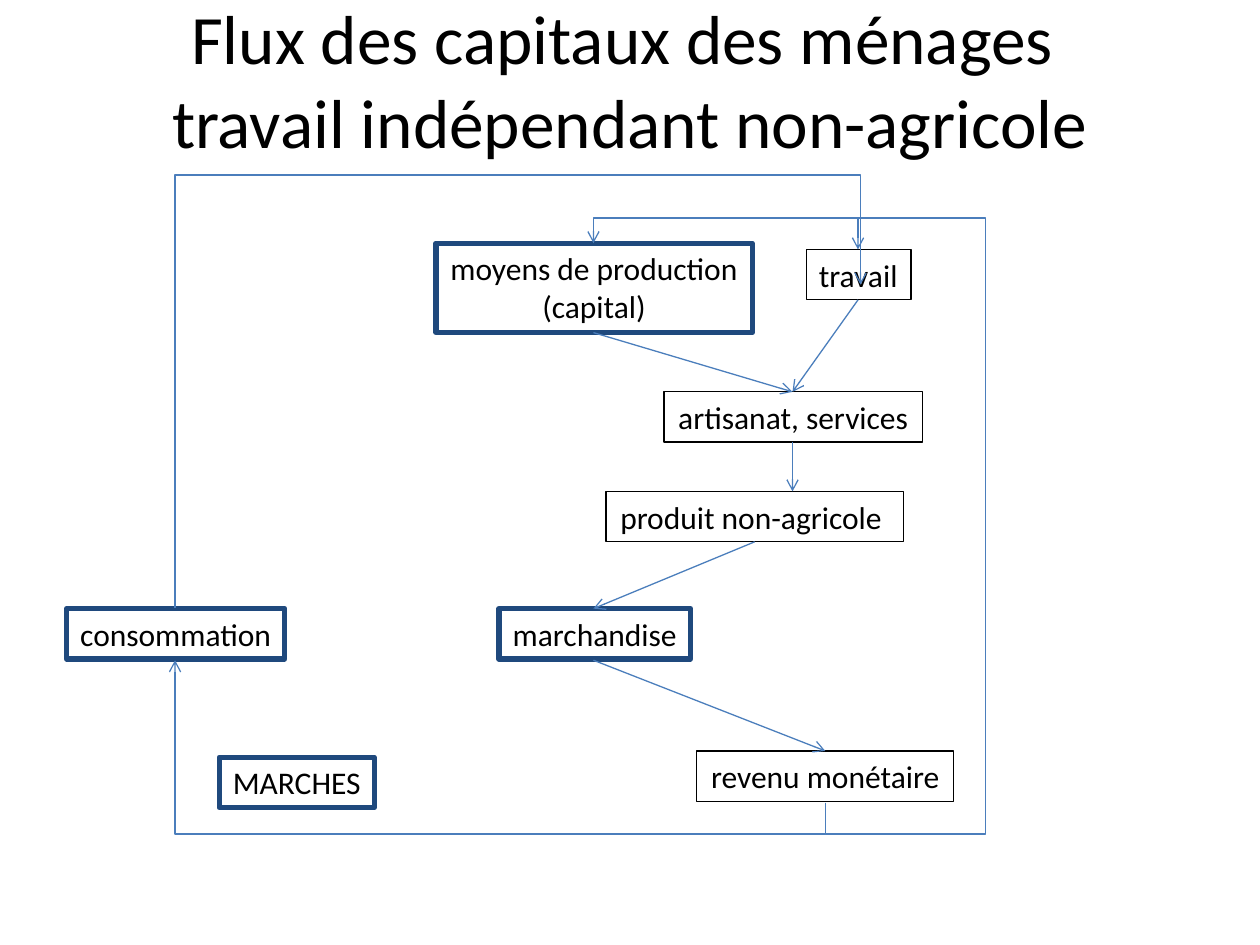
from lxml import etree
from pptx import Presentation
from pptx.dml.color import RGBColor
from pptx.enum.shapes import MSO_CONNECTOR
from pptx.enum.text import MSO_ANCHOR, MSO_AUTO_SIZE, PP_ALIGN
from pptx.oxml.ns import qn
from pptx.util import Inches, Pt

STRAIGHT, ELBOW = MSO_CONNECTOR.STRAIGHT, MSO_CONNECTOR.ELBOW
LEFT, CENTER = PP_ALIGN.LEFT, PP_ALIGN.CENTER
MIDDLE, TOP = MSO_ANCHOR.MIDDLE, MSO_ANCHOR.TOP
GROW = MSO_AUTO_SIZE.SHAPE_TO_FIT_TEXT

FONT = "Calibri"
BLACK, WHITE, NAVY, BLUE = "000000", "FFFFFF", "1F497D", "4B7EBC"

# Lanes that the bent arrows run along
TOP_LANE, INNER_LANE, BOTTOM_LANE, RIGHT_LANE = 1.39, 1.73, 6.62, 7.82


def color(value):
    return RGBColor.from_string(value)


def add_text(page, text, left, top, width, height, size=18, align=CENTER,
             anchor=TOP, wrap=False):
    box = page.shapes.add_textbox(Inches(left), Inches(top), Inches(width), Inches(height))
    frame = box.text_frame
    frame.word_wrap = wrap
    frame.vertical_anchor = anchor
    para = frame.paragraphs[0]
    para.text = text
    para.alignment = align
    for span in para.runs:
        span.font.name = FONT
        span.font.size = Pt(size)
        span.font.color.rgb = color(BLACK)
    return box


def add_step(page, text, left, top, width, height=0.4, market=False, align=CENTER):
    """Flow step; steps that pass through a market have a thick navy frame."""
    box = add_text(page, text, left, top, width, height, align=align)
    box.text_frame.auto_size = GROW
    if market:
        box.fill.solid()
        box.fill.fore_color.rgb = color(WHITE)
    box.line.color.rgb = color(NAVY if market else BLACK)
    box.line.width = Pt(3 if market else 0.75)


def style_arrow(arrow):
    arrow.line.color.rgb = color(BLUE)
    arrow.line.width = Pt(0.75)
    etree.SubElement(arrow.line._get_or_add_ln(), qn("a:tailEnd"), type="arrow")
    etree.SubElement(arrow.element.spPr, qn("a:effectLst"))


def add_arrow(page, start, end):
    points = [Inches(value) for value in (*start, *end)]
    style_arrow(page.shapes.add_connector(STRAIGHT, *points))


def add_bent_arrow(page, start, end, lanes=(), turn=90):
    """Elbow arrow; lanes alternate between y and x positions of its bends."""
    dx, dy = end[0] - start[0], end[1] - start[1]
    # Direction of travel in the frame before it is turned
    across, down = (dy, -dx) if turn == 90 else (-dx, -dy)
    width, height = abs(across), abs(down)
    left = (start[0] + end[0] - width) / 2
    top = (start[1] + end[1] - height) / 2
    arrow = page.shapes.add_connector(ELBOW, Inches(left), Inches(top),
                                      Inches(left + width), Inches(top + height))
    frame = arrow.element.spPr.find(qn("a:xfrm"))
    frame.set("rot", str(turn * 60000))
    if across < 0:
        frame.set("flipH", "1")
    if down < 0:
        frame.set("flipV", "1")

    geometry = arrow.element.spPr.find(qn("a:prstGeom"))
    geometry.set("prst", f"bentConnector{len(lanes) + 2}")
    guides = geometry.find(qn("a:avLst"))
    for index, lane in enumerate(lanes):
        axis = 1 - index % 2
        share = (lane - start[axis]) / (end[axis] - start[axis])
        etree.SubElement(guides, qn("a:gd"), name=f"adj{index + 1}",
                         fmla=f"val {round(share * 100000)}")
    style_arrow(arrow)


def main():
    deck = Presentation()
    deck.slide_width, deck.slide_height = Inches(10), Inches(7.5)
    page = deck.slides.add_slide(deck.slide_layouts[6])

    # Title
    add_text(page, "Flux des capitaux des ménages \ntravail indépendant non-agricole",
             0.5, 0, 9, 1.25, size=39.6, anchor=MIDDLE, wrap=True)

    # Steps
    add_step(page, "travail", 6.4, 1.98, 0.83, align=LEFT)
    add_step(page, "moyens de production\n(capital)", 3.46, 1.93, 2.51, 0.71, market=True)
    add_step(page, "consommation", 0.53, 4.83, 1.73, market=True)
    add_step(page, "marchandise", 3.96, 4.83, 1.52, market=True)
    add_step(page, "revenu monétaire", 5.53, 5.96, 2.04)
    add_step(page, "artisanat, services", 5.27, 3.11, 2.05)
    add_step(page, "produit non-agricole ", 4.81, 3.9, 2.36)
    add_step(page, "MARCHES", 1.74, 6.01, 1.23, market=True)

    # Straight arrows from step to step
    for start, end in [
        ((4.71, 2.64), (6.29, 3.11)),
        ((6.81, 2.38), (6.29, 3.11)),
        ((6.29, 3.51), (6.29, 3.9)),
        ((5.99, 4.3), (4.71, 4.83)),
        ((4.71, 5.24), (6.55, 5.96)),
    ]:
        add_arrow(page, start, end)

    # Bent arrows: income back to labour, capital and consumption
    income = (6.55, 6.37)
    add_bent_arrow(page, income, (6.81, 1.98), [BOTTOM_LANE, RIGHT_LANE, INNER_LANE])
    add_bent_arrow(page, (6.83, INNER_LANE), (4.71, 1.93), turn=180)
    add_bent_arrow(page, income, (1.39, 5.24), [BOTTOM_LANE])
    add_bent_arrow(page, (1.39, 4.83), (6.83, 2.26), [TOP_LANE])

    deck.save("out.pptx")


if __name__ == "__main__":
    main()
